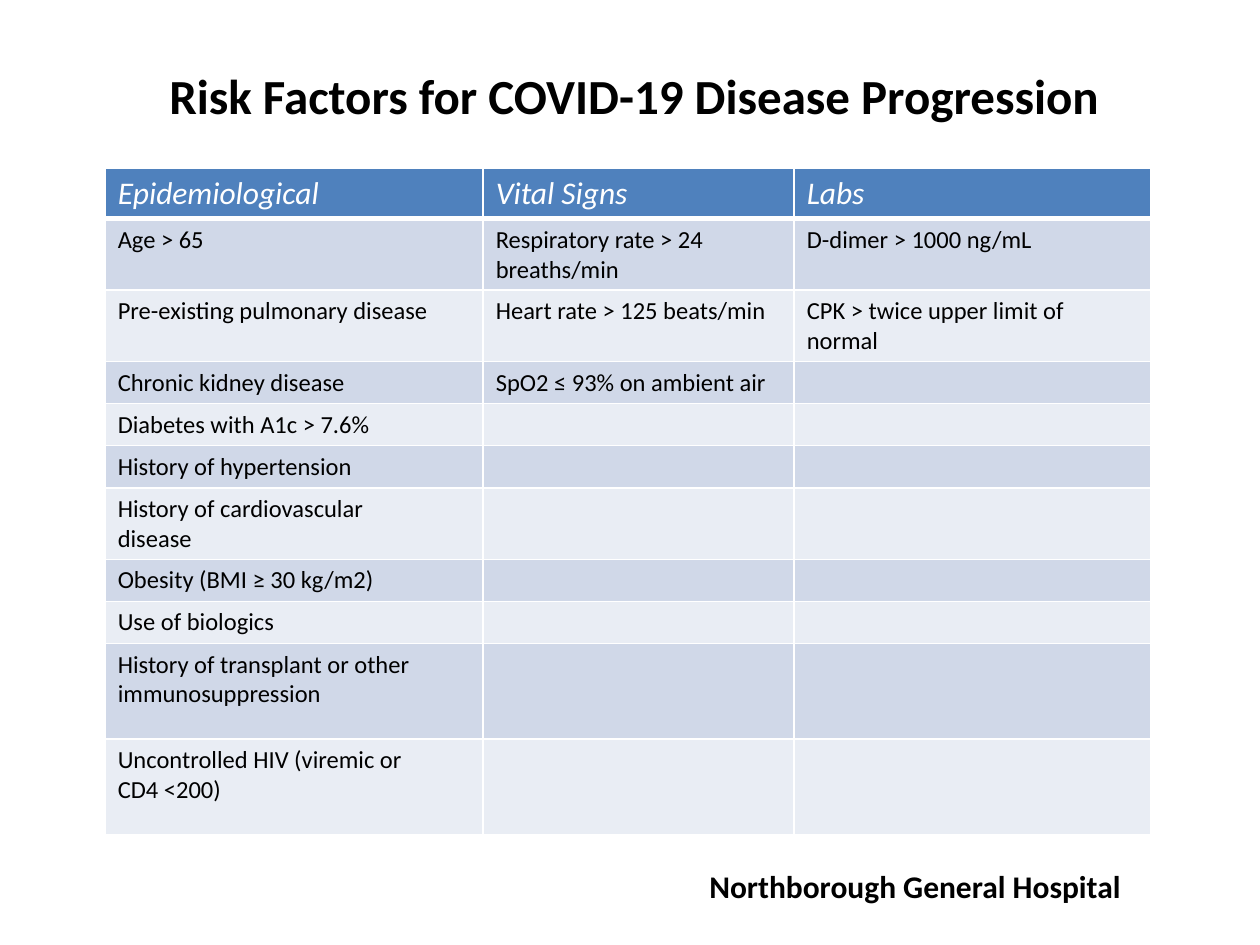
import pptx
import pptx.dml.color
import pptx.enum.text
import pptx.oxml
import pptx.oxml.ns
import pptx.util

Cm = pptx.util.Cm
Pt = pptx.util.Pt
RGBColor = pptx.dml.color.RGBColor

BLACK = RGBColor(0x00, 0x00, 0x00)
WHITE = RGBColor(0xFF, 0xFF, 0xFF)
BLUE = RGBColor(0x4F, 0x81, 0xBD)
BANDS = (RGBColor(0xE9, 0xED, 0xF4), RGBColor(0xD0, 0xD8, 0xE8))
FONT = "Calibri"

WIDTHS = (7.62, 6.27, 7.19)
SHORT, TALL, LAST = 0.79, 1.35, 1.93
ROWS = (
    (0.94, ("Epidemiological", "Vital Signs", "Labs")),
    (TALL, ("Age > 65", "Respiratory rate > 24\nbreaths/min", "D-dimer > 1000 ng/mL")),
    (TALL, ("Pre-existing pulmonary disease", "Heart rate > 125 beats/min",
            "CPK > twice upper limit of\nnormal")),
    (SHORT, ("Chronic kidney disease", "SpO2 ≤ 93% on ambient air", "")),
    (SHORT, ("Diabetes with A1c > 7.6%", "", "")),
    (SHORT, ("History of hypertension", "", "")),
    (TALL, ("History of cardiovascular\ndisease", "", "")),
    (SHORT, ("Obesity (BMI ≥ 30 kg/m2)", "", "")),
    (SHORT, ("Use of biologics", "", "")),
    (LAST, ("History of transplant or other\nimmunosuppression", "", "")),
    (LAST, ("Uncontrolled HIV (viremic or\nCD4 <200)", "", "")),
)


def add_run(para, text, size, color, bold=False, italic=False):
    """Add one styled run to a paragraph."""
    run = para.add_run()
    run.text = text
    font = run.font
    font.name, font.size = FONT, Pt(size)
    font.bold, font.italic = bold, italic
    font.color.rgb = color


def add_label(slide, box, text, size, align, wrap):
    """Add a bold line of text in a box."""
    frame = slide.shapes.add_textbox(*map(Cm, box)).text_frame
    frame.word_wrap = wrap
    frame.vertical_anchor = pptx.enum.text.MSO_ANCHOR.MIDDLE
    para = frame.paragraphs[0]
    para.alignment = align
    add_run(para, text, size, BLACK, bold=True)


def add_edge(cell, side, width):
    """Draw a white border on one side of a cell."""
    space = pptx.oxml.ns.nsdecls("a")
    cell._tc.get_or_add_tcPr().append(pptx.oxml.parse_xml(
        f'<a:ln{side} {space} w="{Pt(width)}"><a:solidFill>'
        f'<a:srgbClr val="{WHITE}"/></a:solidFill></a:ln{side}>'))


def fill_cell(cell, text, row):
    """Set the borders, fill and text of a cell."""
    head = row == 0
    size = 18 if head else 14
    for side in "LRTB":
        thick = (row, side) in ((0, "B"), (1, "T"))
        add_edge(cell, side, 3 if thick else 1)
    cell.fill.solid()
    cell.fill.fore_color.rgb = BLUE if head else BANDS[row % 2]
    frame = cell.text_frame
    for index, line in enumerate(text.split("\n")):
        para = frame.add_paragraph() if index else frame.paragraphs[0]
        if line:
            add_run(para, line, size, WHITE if head else BLACK, italic=head)
        else:
            para._p.get_or_add_endParaRPr().set("sz", str(size * 100))


def add_grid(slide):
    """Add the table of risk factors."""
    high = sum(height for height, _ in ROWS)
    table = slide.shapes.add_table(
        len(ROWS), len(WIDTHS), Cm(2.12), Cm(3.39), Cm(sum(WIDTHS)), Cm(high)).table
    for column, width in zip(table.columns, WIDTHS):
        column.width = Cm(width)
    for row, (height, texts) in enumerate(ROWS):
        table.rows[row].height = Cm(height)
        for col, text in enumerate(texts):
            fill_cell(table.cell(row, col), text, row)


def main():
    """Build the slide and save it."""
    deck = pptx.Presentation()
    deck.slide_width, deck.slide_height = Cm(25.4), Cm(19.05)
    slide = deck.slides.add_slide(deck.slide_layouts[6])
    align = pptx.enum.text.PP_ALIGN
    add_label(slide, (1.35, 1.17, 22.86, 1.47),
              "Risk Factors for COVID-19 Disease Progression", 28, align.CENTER, True)
    add_grid(slide)
    add_label(slide, (14.05, 17.35, 9.14, 1.02),
              "Northborough General Hospital", 18, align.LEFT, False)
    deck.save("out.pptx")


if __name__ == "__main__":
    main()
